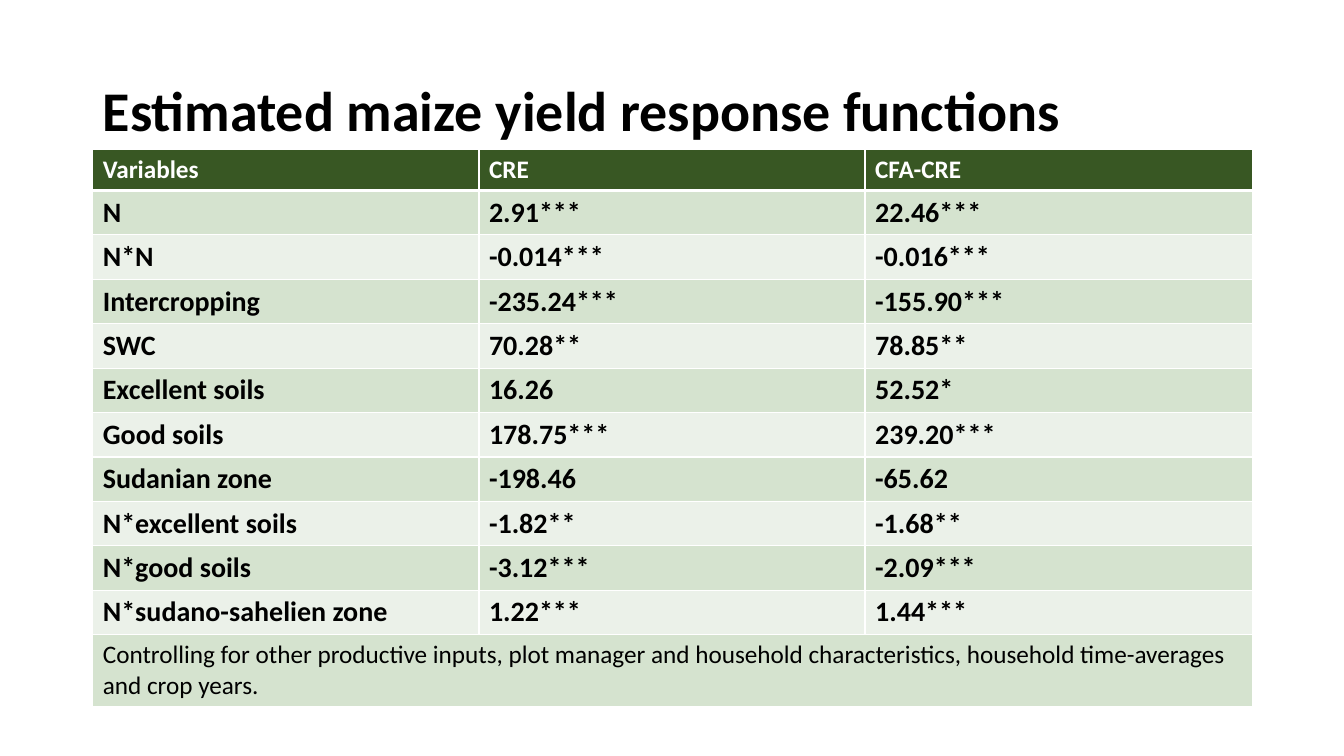
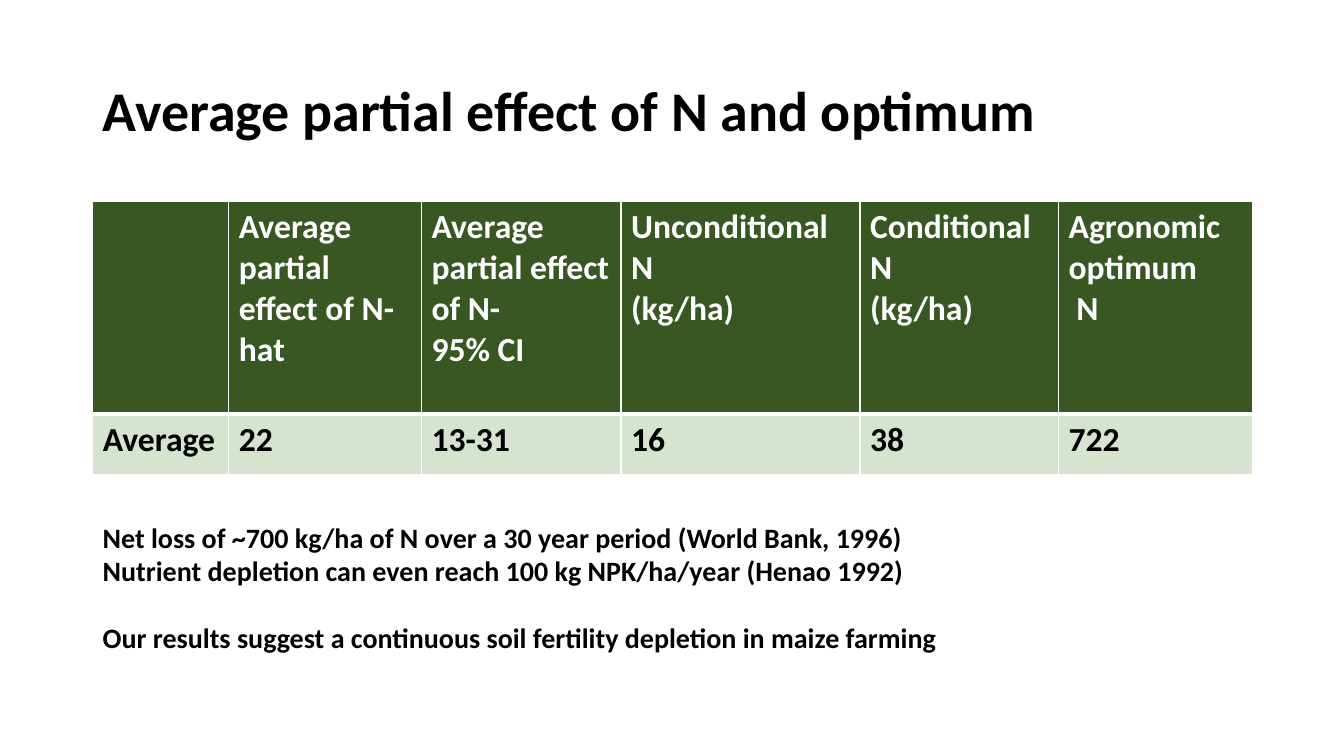
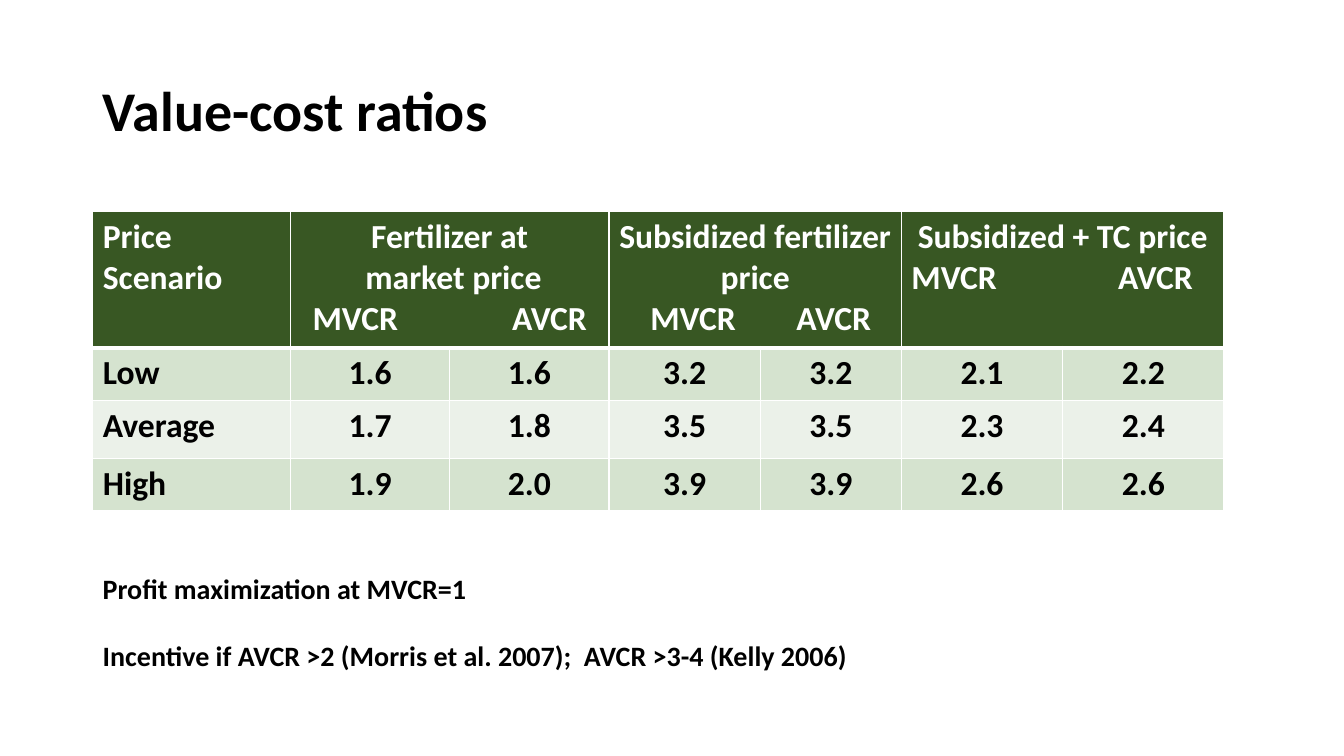
from pptx import Presentation
from pptx.dml.color import RGBColor
from pptx.enum.text import MSO_ANCHOR, MSO_AUTO_SIZE, PP_ALIGN
from pptx.oxml.ns import qn
from pptx.util import Emu, Pt
from lxml.etree import SubElement

PX = 9144  # one hundredth of an inch
LEFT = 92
COLORS = {"ink": "000000", "paper": "FFFFFF", "header": "385723",
          "band": "D5E3CF", "light": "EBF1E9"}


def px(length):
    return Emu(length * PX)


def color(name):
    return RGBColor.from_string(COLORS[name])


class Deck:
    """Shared style and the slide being filled."""

    def __init__(self):
        self.deck = Presentation()
        self.deck.slide_width, self.deck.slide_height = px(1333), px(750)
        self.page = None

    def add_lines(self, frame, lines, size, ink="ink", bold=True):
        """Fill a text frame, one paragraph for each line."""
        for index, line in enumerate(lines):
            para = frame.paragraphs[0] if index == 0 else frame.add_paragraph()
            para.alignment = PP_ALIGN.LEFT
            span = para.add_run()
            span.text = line
            for name, value in {"name": "Calibri", "size": Pt(size), "bold": bold}.items():
                setattr(span.font, name, value)
            span.font.color.rgb = color(ink)
        return frame.paragraphs

    def title(self, text):
        """Start a title-only slide."""
        self.page = self.deck.slides.add_slide(self.deck.slide_layouts[5])
        box = self.page.shapes.title
        place = {"left": LEFT, "top": 40, "width": 1150, "height": 145}
        for name, value in place.items():
            setattr(box, name, px(value))
        frame = box.text_frame
        settings = {"auto_size": MSO_AUTO_SIZE.NONE, "word_wrap": True,
                    "vertical_anchor": MSO_ANCHOR.MIDDLE}
        for name, value in settings.items():
            setattr(frame, name, value)
        self.add_lines(frame, [text], 40)[0].line_spacing = 0.9

    def note(self, top, width, height, lines):
        """Add a text box; the last line stands one line apart."""
        box = self.page.shapes.add_textbox(px(LEFT), px(top), px(width), px(height))
        box.text_frame.word_wrap = True
        self.add_lines(box.text_frame, lines, 20)[-1].space_before = Pt(24)

    def borders(self, cell, row):
        """Draw white cell edges, thicker below the header row."""
        properties = cell._tc.get_or_add_tcPr()
        widths = {"lnL": 1, "lnR": 1, "lnT": 3 if row == 1 else 1, "lnB": 3 if row == 0 else 1}
        for edge, width in widths.items():
            line = SubElement(properties, qn("a:" + edge), w=str(int(Pt(width))))
            fill = SubElement(line, qn("a:solidFill"))
            SubElement(fill, qn("a:srgbClr"), val=COLORS["paper"])

    def tab_stops(self, para, stops):
        tabs = SubElement(para._p.get_or_add_pPr(), qn("a:tabLst"))
        for stop in stops:
            SubElement(tabs, qn("a:tab"), pos=str(int(px(stop))), algn="l")

    def table(self, top, widths, heights, rows, size=24, header_size=24,
              centered=False, merges=(), tabs=None):
        """Add a banded table; tabs gives the stops of a header column."""
        shape = self.page.shapes.add_table(len(heights), len(widths), px(LEFT), px(top),
                                           px(sum(widths)), px(sum(heights)))
        grid = shape.table
        for column, width in zip(grid.columns, widths):
            column.width = px(width)
        for line, height in zip(grid.rows, heights):
            line.height = px(height)
        for row, texts in enumerate(rows):
            fill = "header" if row == 0 else "band" if row % 2 else "light"
            is_note = len(texts) == 1
            for column in range(len(widths)):
                cell = grid.cell(row, column)
                self.borders(cell, row)
                cell.fill.solid()
                cell.fill.fore_color.rgb = color(fill)
                if column >= len(texts) or not texts[column]:
                    continue
                paras = self.add_lines(cell.text_frame, texts[column].split("\n"),
                                       header_size if row == 0 or is_note else size,
                                       "ink" if row else "paper", not is_note)
                for para in paras:
                    if "\t" in para.text:
                        self.tab_stops(para, tabs[column])
                    elif centered and column:
                        para.alignment = PP_ALIGN.CENTER
        for row, first, last in merges:
            grid.cell(row, first).merge(grid.cell(row, last))


def main():
    deck = Deck()

    # Yield response
    deck.title("Estimated maize yield response functions")
    deck.table(148, [383, 383, 384], [41] + [44] * 10 + [71], [
        ["Variables", "CRE", "CFA-CRE"],
        ["N", "2.91***", "22.46***"],
        ["N*N", "-0.014***", "-0.016***"],
        ["Intercropping", "-235.24***", "-155.90***"],
        ["SWC", "70.28**", "78.85**"],
        ["Excellent soils", "16.26", "52.52*"],
        ["Good soils", "178.75***", "239.20***"],
        ["Sudanian zone", "-198.46", "-65.62"],
        ["N*excellent soils", "-1.82**", "-1.68**"],
        ["N*good soils", "-3.12***", "-2.09***"],
        ["N*sudano-sahelien zone", "1.22***", "1.44***"],
        ["Controlling for other productive inputs, plot manager and household "
         "characteristics, household time-averages and crop years."],
    ], size=20, header_size=18, merges=[(11, 0, 2)])

    # Partial effect
    deck.title("Average partial effect of N and optimum")
    deck.table(200, [135, 191, 198, 237, 197, 192], [211, 60], [
        ["", "Average partial effect of N-hat", "Average partial effect of N-\n95% CI",
         "Unconditional N\n(kg/ha)", "Conditional N\n(kg/ha)", "Agronomic optimum\n N"],
        ["Average", "22", "13-31", "16", "38", "722"],
    ])
    deck.note(511, 1123, 145, [
        "Net loss of ~700 kg/ha of N over a 30 year period (World Bank, 1996)",
        "Nutrient depletion can even reach 100 kg NPK/ha/year (Henao 1992)",
        "Our results suggest a continuous soil fertility depletion in maize farming",
    ])

    # Value-cost ratios
    deck.title("Value-cost ratios")
    deck.table(210, [196, 158, 158, 150, 140, 160, 160], [135, 52, 58, 52], [
        ["Price\nScenario", "Fertilizer at\n market price\n\tMVCR\tAVCR", "",
         "Subsidized fertilizer price\n\tMVCR\tAVCR", "",
         "Subsidized + TC price\nMVCR\tAVCR", ""],
        ["Low", "1.6", "1.6", "3.2", "3.2", "2.1", "2.2"],
        ["Average", "1.7", "1.8", "3.5", "3.5", "2.3", "2.4"],
        ["High", "1.9", "2.0", "3.9", "3.9", "2.6", "2.6"],
    ], centered=True, merges=[(0, first, first + 1) for first in (1, 3, 5)],
        tabs={1: [12, 210], 3: [31, 176], 5: [205]})
    deck.note(562, 852, 158, [
        "Profit maximization at MVCR=1",
        "Incentive if AVCR >2 (Morris et al. 2007);  AVCR >3-4 (Kelly 2006)",
    ])

    deck.deck.save("out.pptx")


if __name__ == "__main__":
    main()
